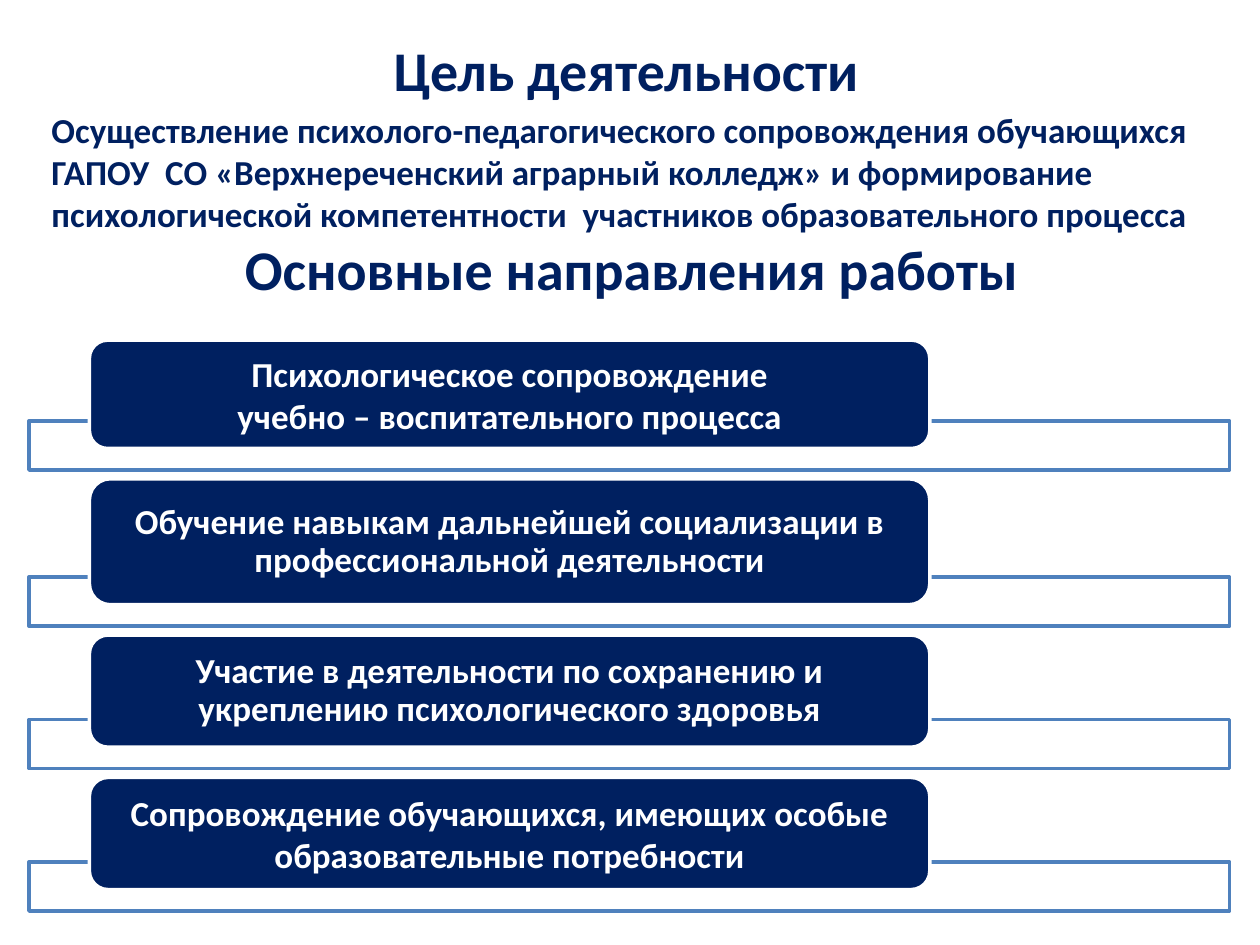
"""Build the slide on the goal and main directions of the college's psychological service."""
from dataclasses import dataclass

from lxml import etree
from pptx import Presentation
from pptx.dml.color import RGBColor
from pptx.enum.shapes import MSO_SHAPE
from pptx.enum.text import MSO_ANCHOR, PP_ALIGN
from pptx.oxml.ns import qn
from pptx.shapes.autoshape import Shape
from pptx.slide import Slide
from pptx.text.text import TextFrame
from pptx.util import Inches, Pt

RECTANGLE, ROUNDED = MSO_SHAPE.RECTANGLE, MSO_SHAPE.ROUNDED_RECTANGLE
TOP, MIDDLE = MSO_ANCHOR.TOP, MSO_ANCHOR.MIDDLE
LEFT, CENTER = PP_ALIGN.LEFT, PP_ALIGN.CENTER


@dataclass(frozen=True)
class Theme:
    """Colours and type sizes of the slide."""
    navy: RGBColor = RGBColor(0x00, 0x20, 0x60)
    blue: RGBColor = RGBColor(0x4F, 0x81, 0xBD)
    white: RGBColor = RGBColor(0xFF, 0xFF, 0xFF)
    font: str = "Calibri"
    heading: int = 32
    body: int = 20
    outline: int = 2


@dataclass(frozen=True)
class Direction:
    """One direction of work: its lines, label height and line spacing."""
    lines: tuple[str, ...]
    height: float
    spacing: float = 1.0


THEME = Theme()
GOAL = (
    "Осуществление психолого-педагогического сопровождения обучающихся",
    "ГАПОУ  СО «Верхнереченский аграрный колледж» и формирование",
    "психологической компетентности  участников образовательного процесса",
)
DIRECTIONS = (
    Direction(("Психологическое сопровождение", "учебно – воспитательного процесса"), 0.86),
    Direction(("Обучение навыкам дальнейшей социализации в профессиональной деятельности",), 1.0, 0.9),
    Direction(("Участие в деятельности по сохранению и укреплению психологического здоровья",), 0.89, 0.9),
    Direction(("Сопровождение обучающихся, имеющих особые образовательные потребности",), 0.89),
)
FIRST_TOP, GAP = 2.7, 0.24
LABEL_LEFT, LABEL_WIDTH, LABEL_INSET = 0.71, 6.67, 0.25
BAND_LEFT, BAND_WIDTH, BAND_HEIGHT, BAND_OVERLAP = 0.23, 9.53, 0.39, 0.22


def write(frame: TextFrame, lines: tuple[str, ...], *, size: int = THEME.body,
          color: RGBColor = THEME.navy, align: PP_ALIGN = CENTER,
          anchor: MSO_ANCHOR = MIDDLE, spacing: float = 1.0) -> None:
    """Add lines as bold paragraphs, filling the empty first one."""
    frame.word_wrap = True
    frame.vertical_anchor = anchor
    for line in lines:
        paragraph = frame.paragraphs[0] if not frame.text else frame.add_paragraph()
        paragraph.alignment = align
        paragraph.line_spacing = spacing
        run = paragraph.add_run()
        run.text = line
        run.font.name = THEME.font
        run.font.size = Pt(size)
        run.font.bold = True
        run.font.color.rgb = color


def add_panel(slide: Slide, kind: MSO_SHAPE, left: float, top: float, width: float,
              height: float, fill: RGBColor, line: RGBColor) -> Shape:
    """Add a filled and outlined shape without a shadow."""
    panel = slide.shapes.add_shape(kind, Inches(left), Inches(top), Inches(width), Inches(height))
    panel.shadow.inherit = False
    panel.fill.solid()
    panel.fill.fore_color.rgb = fill
    panel.line.color.rgb = line
    panel.line.width = Pt(THEME.outline)
    return panel


def add_direction(slide: Slide, direction: Direction, top: float) -> None:
    """Draw a direction's translucent band with its label on top."""
    band = add_panel(slide, RECTANGLE, BAND_LEFT, top + direction.height - BAND_OVERLAP,
                     BAND_WIDTH, BAND_HEIGHT, THEME.white, THEME.blue)
    tint = band.fill._xPr.find(qn("a:solidFill"))[0]
    etree.SubElement(tint, qn("a:alpha"), val="90000")
    label = add_panel(slide, ROUNDED, LABEL_LEFT, top, LABEL_WIDTH, direction.height,
                      THEME.navy, THEME.white)
    frame = label.text_frame
    frame.margin_left = frame.margin_right = Inches(LABEL_INSET)
    frame.margin_top = frame.margin_bottom = 0
    write(frame, direction.lines, color=THEME.white, spacing=direction.spacing)


def main() -> None:
    """Build and save the slide."""
    deck = Presentation()
    deck.slide_width, deck.slide_height = Inches(10), Inches(7.5)
    slide = deck.slides.add_slide(deck.slide_layouts[5])

    title = slide.shapes.title
    title.left, title.top, title.width, title.height = map(Inches, (0.47, 0.2, 9, 0.7))
    write(title.text_frame, ("Цель деятельности",), size=THEME.heading)

    goal = slide.shapes.add_textbox(Inches(0.31), Inches(0.81), Inches(9.41), Inches(1.65))
    write(goal.text_frame, GOAL, align=LEFT, anchor=TOP)
    write(goal.text_frame, ("Основные направления работы",), size=THEME.heading, anchor=TOP)

    top = FIRST_TOP
    for direction in DIRECTIONS:
        add_direction(slide, direction, top)
        top += direction.height + GAP

    deck.save("out.pptx")


if __name__ == "__main__":
    main()
